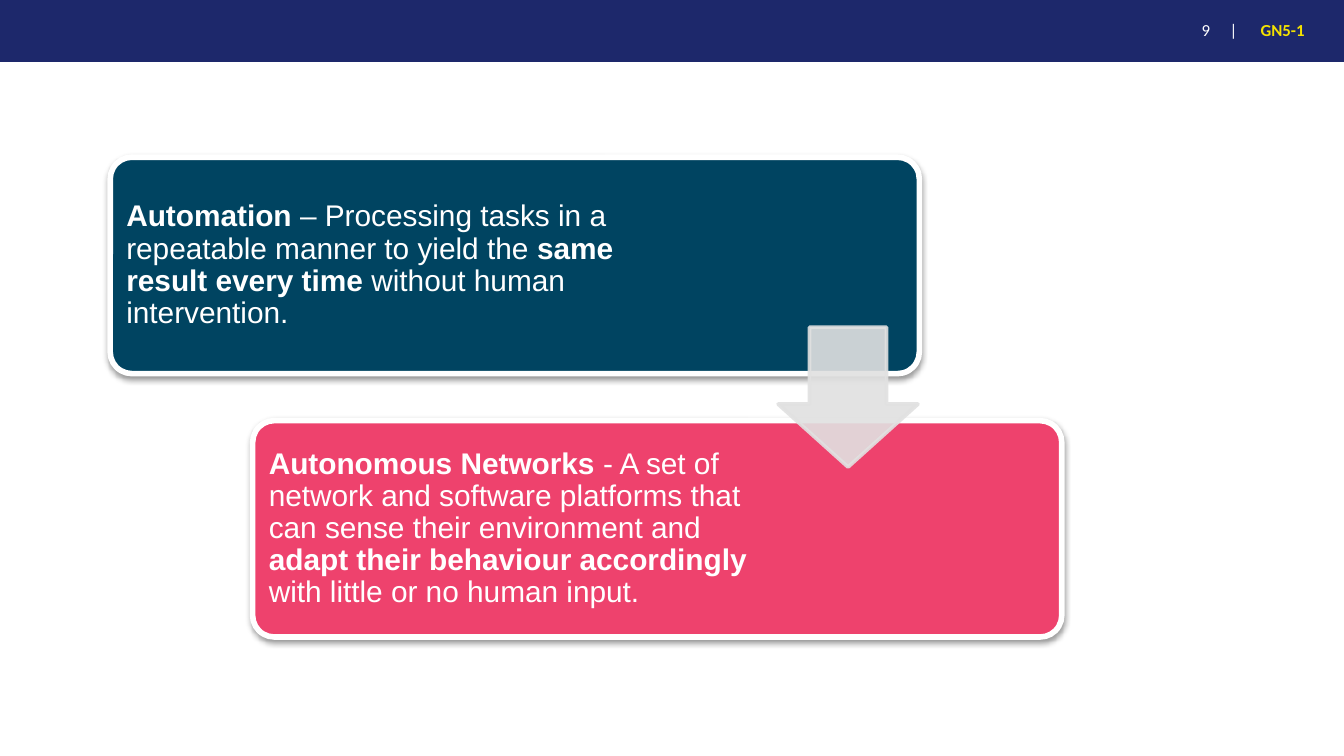
from dataclasses import dataclass

from lxml import etree
from pptx import Presentation
from pptx import util as u
from pptx.dml.color import RGBColor
from pptx.enum import shapes, text
from pptx.oxml.ns import qn


@dataclass(frozen=True)
class Theme:
    navy: str = "1D286B"
    teal: str = "004461"
    pink: str = "EE426D"
    grey: str = "E1E1E1"
    yellow: str = "F4E200"
    white: str = "FFFFFF"
    black: str = "000000"
    body_font: str = "Arial"
    header_font: str = "Calibri"
    body_size: int = 16
    header_size: int = 9


THEME = Theme()
WIDTH, HEIGHT = 10, 5.625

# Cards step down and to the right by a fixed amount (inches)
CARD_LEFT, CARD_TOP = 0.82, 1.17
CARD_WIDTH, CARD_HEIGHT = 6.02, 1.61
STEP_X, STEP_Y = 1.06, 1.96
CARD_PAD = 0.05
ARROW_SIZE = 1.04

# Fill, text width, and (wording, bold) spans of each card
CARDS = [
    (THEME.teal, 4.36, [
        ("Automation", True),
        (" – Processing tasks in a repeatable manner to yield the ", False),
        ("same result every time ", True),
        ("without human intervention.", False),
    ]),
    (THEME.pink, 3.82, [
        ("Autonomous Networks", True),
        (" - A set of network and software platforms that can sense "
         "their environment and ", False),
        ("adapt their behaviour accordingly ", True),
        ("with little or no human input.", False),
    ]),
]


def add_alpha(fill_parent, percent):
    color = fill_parent.find(qn("a:solidFill")).find(qn("a:srgbClr"))
    etree.SubElement(color, qn("a:alpha"), val=str(percent * 1000))


def add_card_shadow(shape):
    effects = shape._element.spPr.find(qn("a:effectLst"))
    shadow = etree.SubElement(
        effects, qn("a:outerShdw"), blurRad=str(u.Pt(3.1)),
        dist=str(u.Pt(1.6)), dir="5400000", rotWithShape="0")
    color = etree.SubElement(shadow, qn("a:srgbClr"), val=THEME.black)
    etree.SubElement(color, qn("a:alpha"), val="38000")


def add_block(page, kind, frame, fill, line=None, line_width=0, adjust=()):
    shape = page.shapes.add_shape(kind, *map(u.Inches, frame))
    shape.shadow.inherit = False
    shape.fill.solid()
    shape.fill.fore_color.rgb = RGBColor.from_string(fill)
    if line:
        shape.line.color.rgb = RGBColor.from_string(line)
        shape.line.width = u.Pt(line_width)
    else:
        shape.line.fill.background()
    for index, value in enumerate(adjust):
        shape.adjustments[index] = value
    return shape


def add_text(page, frame, spans, font, size, color, left=0.07, inset=0.07,
             spacing=None, tab=None):
    box = page.shapes.add_textbox(*map(u.Inches, frame))
    body = box.text_frame
    body.word_wrap = True
    body.vertical_anchor = text.MSO_ANCHOR.MIDDLE
    body.margin_left, body.margin_right = u.Inches(left), u.Inches(0.07)
    body.margin_top = body.margin_bottom = u.Inches(inset)
    para = body.paragraphs[0]
    if spacing:
        para.line_spacing = spacing
    if tab:
        stops = etree.SubElement(para._p.get_or_add_pPr(), qn("a:tabLst"))
        etree.SubElement(stops, qn("a:tab"), pos=str(u.Inches(tab)), algn="l")
    para.font.name = font
    para.font.size = u.Pt(size)
    para.font.color.rgb = RGBColor.from_string(color)
    for wording, bold in spans:
        span = para.add_run()
        span.text = wording
        span.font.bold = bold


def add_header(page):
    add_block(page, shapes.MSO_SHAPE.RECTANGLE, (0, -0.03, WIDTH, 0.49),
              THEME.navy)
    add_text(page, (8.73, 0.09, 0.55, 0.27), [("9\t|", False)],
             THEME.header_font, THEME.header_size, THEME.white,
             left=0.21, inset=0.04, tab=0.21)
    add_text(page, (9.31, 0.11, 1.04, 0.24), [("GN5-1", True)],
             THEME.header_font, THEME.header_size, THEME.yellow,
             inset=0.04, spacing=0.9)


def add_card(page, index, fill, text_width, spans):
    left, top = CARD_LEFT + index * STEP_X, CARD_TOP + index * STEP_Y
    card = add_block(page, shapes.MSO_SHAPE.ROUNDED_RECTANGLE,
                     (left, top, CARD_WIDTH, CARD_HEIGHT), fill,
                     THEME.white, 3, [0.1])
    add_card_shadow(card)
    add_text(page, (left + CARD_PAD, top + CARD_PAD, text_width,
                    CARD_HEIGHT - 2 * CARD_PAD),
             spans, THEME.body_font, THEME.body_size, THEME.white, spacing=0.9)


def add_step_arrow(page):
    # Ends flush with the first card and bridges the gap between the cards
    left = CARD_LEFT + CARD_WIDTH - ARROW_SIZE - 0.01
    middle = CARD_TOP + (CARD_HEIGHT + STEP_Y) / 2
    arrow = add_block(page, shapes.MSO_SHAPE.DOWN_ARROW,
                      (left, middle - ARROW_SIZE / 2, ARROW_SIZE, ARROW_SIZE),
                      THEME.grey, THEME.grey, 2)
    # The first handle is the head length, the second the shaft width
    arrow.adjustments[0], arrow.adjustments[1] = 0.55, 0.45
    properties = arrow._element.spPr
    add_alpha(properties, 90)
    add_alpha(properties.find(qn("a:ln")), 90)


def main():
    deck = Presentation()
    deck.slide_width, deck.slide_height = u.Inches(WIDTH), u.Inches(HEIGHT)
    page = deck.slides.add_slide(deck.slide_layouts[6])
    add_header(page)
    for index, card in enumerate(CARDS):
        add_card(page, index, *card)
    add_step_arrow(page)
    deck.save("out.pptx")


if __name__ == "__main__":
    main()
